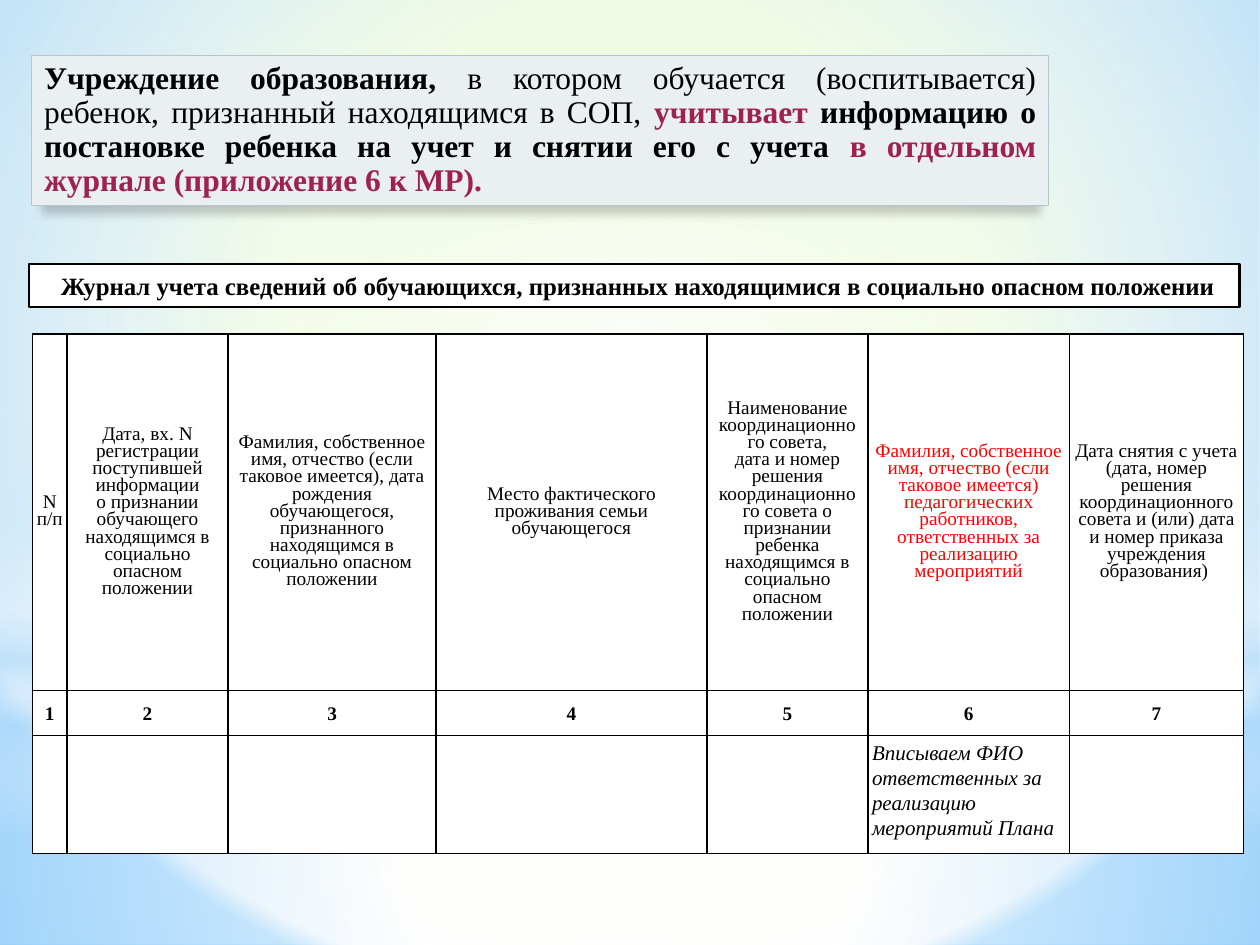
"""Build a slide presenting the register of pupils in a socially dangerous position."""
from dataclasses import dataclass
from typing import Optional

import lxml.etree
import pptx
import pptx.dml.color
import pptx.enum.shapes
import pptx.enum.text
import pptx.oxml
import pptx.oxml.ns
import pptx.util

Cm = pptx.util.Cm
Pt = pptx.util.Pt
qn = pptx.oxml.ns.qn
Align = pptx.enum.text.PP_ALIGN
Anchor = pptx.enum.text.MSO_ANCHOR
Preset = pptx.enum.shapes.MSO_SHAPE
DRAWING = 'xmlns:a="http://schemas.openxmlformats.org/drawingml/2006/main"'
FONT = "Times New Roman"
BLACK, WHITE, RED, CRIMSON = "000000", "FFFFFF", "FF0000", "9E224E"


@dataclass
class Words:
    text: str
    size: float = 11
    color: str = BLACK
    bold: bool = False
    italic: bool = False


@dataclass
class Gradient:
    stops: list[tuple[int, str, int]]
    center: Optional[tuple[int, int, int, int]] = (50, 50, 50, 50)


@dataclass
class Layer:
    preset: int
    top: float
    height: float
    gradient: Gradient


@dataclass
class Panel:
    box: tuple[float, float, float, float]
    fill: str
    line: str
    line_width: float
    align: int
    spacing: float
    words: list[Words]


BACKDROP = Gradient([(0, "CAF297", 100), (97, WHITE, 100), (100, "5BB9FF", 100)], (20, 10, 20, 60))
SKY = "B4DCFA"
LAYERS = [
    Layer(Preset.RECTANGLE, 14.17, 4.88, Gradient([(0, WHITE, 91), (37, WHITE, 76), (100, SKY, 79)])),
    Layer(Preset.RECTANGLE, 0, 14.17, Gradient([(0, WHITE, 89), (48, WHITE, 62), (100, SKY, 79)])),
    Layer(Preset.RECTANGLE, 10.46, 6.35, Gradient(
        [(0, WHITE, 0), (29, WHITE, 30), (45, SKY, 40), (55, WHITE, 26), (65, SKY, 60), (100, WHITE, 0)], None)),
    Layer(Preset.OVAL, 4.45, 14.17, Gradient([(0, WHITE, 100), (56, WHITE, 0)])),
]
JOURNAL_TITLE = Panel((0.58, 5.33, 24.41, 0.86), WHITE, BLACK, 1.25, Align.CENTER, 1, [
    Words(" Журнал учета сведений об обучающихся, признанных находящимися в социально опасном положении",
          14.2, bold=True)])
REQUIREMENT = Panel((0.64, 1.12, 20.5, 3.02), "EAEFF2", "B7C5D1", 0.75, Align.JUSTIFY, 0.9, [
    Words("Учреждение образования, ", 18, bold=True),
    Words("в котором обучается (воспитывается) ребенок, признанный находящимся в СОП, ", 18),
    Words("учитывает ", 18, CRIMSON, True),
    Words("информацию о постановке ребенка на учет и снятии его с учета ", 18, bold=True),
    Words("в отдельном журнале (приложение 6 к МР).", 18, CRIMSON, True)])
COLUMN_WIDTHS = [0.69, 3.25, 4.19, 5.46, 3.25, 4.06, 3.51]
ROW_HEIGHTS = [7.19, 0.91, 2.36]
HEADINGS = [
    ["N\nп/п"],
    ["Дата, вх. N регистрации поступившей информации",
     "о признании обучающего находящимся в социально опасном положении"],
    ["Фамилия, собственное имя, отчество (если таковое имеется), дата рождения обучающегося, "
     "признанного находящимся в социально опасном положении"],
    ["Место фактического проживания семьи обучающегося"],
    ["Наименование координационно", "го совета,", "дата и номер решения координационно",
     "го совета о признании ребенка находящимся в социально опасном положении"],
    ["Фамилия, собственное имя, отчество (если таковое имеется) педагогических работников, "
     "ответственных за реализацию мероприятий"],
    ["Дата снятия с учета",
     "(дата, номер решения координационного совета и (или) дата и номер приказа учреждения образования) "],
]
RESPONSIBLE = 5
SAMPLE = Words("Вписываем ФИО ответственных за реализацию мероприятий Плана", 12, italic=True)


def rgb(color: str) -> pptx.dml.color.RGBColor:
    return pptx.dml.color.RGBColor.from_string(color)


def apply_gradient(fill, owner, gradient: Gradient) -> None:
    fill.gradient()
    stops = "".join(
        f'<a:gs pos="{position * 1000}"><a:srgbClr val="{color}"><a:alpha val="{alpha * 1000}"/></a:srgbClr></a:gs>'
        for position, color, alpha in gradient.stops)
    if gradient.center is None:
        direction = '<a:lin ang="5400000" scaled="0"/>'
    else:
        left, top, right, bottom = (side * 1000 for side in gradient.center)
        direction = (f'<a:path path="circle"><a:fillToRect l="{left}" t="{top}" '
                     f'r="{right}" b="{bottom}"/></a:path>')
    plain = owner.find(".//" + qn("a:gradFill"))
    plain.getparent().replace(plain, pptx.oxml.parse_xml(
        f'<a:gradFill {DRAWING} rotWithShape="1"><a:gsLst>{stops}</a:gsLst>{direction}</a:gradFill>'))


def write_paragraph(paragraph, words: list[Words], align: int, spacing: float) -> None:
    paragraph.alignment = align
    paragraph.line_spacing = spacing
    for part in words:
        for index, line in enumerate(part.text.split("\n")):
            if index:
                paragraph.add_line_break()
            run = paragraph.add_run()
            run.text = line
            run.font.name = FONT
            run.font.size = Pt(part.size)
            run.font.bold = part.bold
            run.font.italic = part.italic
            run.font.color.rgb = rgb(part.color)


def draw_layer(slide, layer: Layer) -> None:
    shape = slide.shapes.add_shape(layer.preset, 0, Cm(layer.top), Cm(25.4), Cm(layer.height))
    shape.shadow.inherit = False
    shape.line.fill.background()
    apply_gradient(shape.fill, shape.element, layer.gradient)


def draw_panel(slide, panel: Panel):
    shape = slide.shapes.add_shape(Preset.RECTANGLE, *map(Cm, panel.box))
    shape.shadow.inherit = False
    shape.fill.solid()
    shape.fill.fore_color.rgb = rgb(panel.fill)
    shape.line.color.rgb = rgb(panel.line)
    shape.line.width = Pt(panel.line_width)
    frame = shape.text_frame
    frame.word_wrap = True
    frame.auto_size = pptx.enum.text.MSO_AUTO_SIZE.SHAPE_TO_FIT_TEXT
    write_paragraph(frame.paragraphs[0], panel.words, panel.align, panel.spacing)
    return shape


def cast_shadow(shape) -> None:
    effects = shape.element.spPr.find(qn("a:effectLst"))
    effects.append(pptx.oxml.parse_xml(
        f'<a:outerShdw {DRAWING} blurRad="{Pt(5)}" dist="{Pt(4)}" dir="5400000" sx="98000" algn="b" '
        f'rotWithShape="0"><a:srgbClr val="{BLACK}"><a:alpha val="20000"/></a:srgbClr></a:outerShdw>'))


def style_cell(cell) -> None:
    cell.margin_left = cell.margin_right = Cm(0.08)
    cell.margin_top = cell.margin_bottom = Cm(0.1)
    cell.fill.solid()
    cell.fill.fore_color.rgb = rgb(WHITE)
    properties = cell._tc.get_or_add_tcPr()
    for index, side in enumerate(("lnL", "lnR", "lnT", "lnB")):
        properties.insert(index, pptx.oxml.parse_xml(
            f'<a:{side} {DRAWING} w="{Pt(1)}"><a:solidFill><a:srgbClr val="{BLACK}"/></a:solidFill></a:{side}>'))


def fill_cell(cell, paragraphs: list[Words], align: int, spacing: float, anchor: int) -> None:
    cell.vertical_anchor = anchor
    frame = cell.text_frame
    for index, words in enumerate(paragraphs):
        paragraph = frame.add_paragraph() if index else frame.paragraphs[0]
        write_paragraph(paragraph, [words], align, spacing)


def draw_journal(slide) -> None:
    journal = slide.shapes.add_table(len(ROW_HEIGHTS), len(COLUMN_WIDTHS), Cm(0.66), Cm(6.73),
                                     Cm(sum(COLUMN_WIDTHS)), Cm(sum(ROW_HEIGHTS))).table
    journal.first_row = journal.horz_banding = False
    for column, width in zip(journal.columns, COLUMN_WIDTHS):
        column.width = Cm(width)
    for row, height in zip(journal.rows, ROW_HEIGHTS):
        row.height = Cm(height)
    for cell in journal.iter_cells():
        style_cell(cell)
    for index, heading in enumerate(HEADINGS):
        color = RED if index == RESPONSIBLE else BLACK
        fill_cell(journal.cell(0, index), [Words(text, color=color) for text in heading],
                  Align.CENTER, 0.8, Anchor.MIDDLE)
        fill_cell(journal.cell(1, index), [Words(str(index + 1), bold=True)], Align.CENTER, 1.07, Anchor.MIDDLE)
    fill_cell(journal.cell(2, RESPONSIBLE), [SAMPLE], Align.LEFT, 1.07, Anchor.TOP)


def main() -> None:
    deck = pptx.Presentation()
    deck.slide_width, deck.slide_height = Cm(25.4), Cm(19.05)
    slide = deck.slides.add_slide(deck.slide_layouts[6])
    apply_gradient(slide.background.fill, slide.element, BACKDROP)
    for layer in LAYERS:
        draw_layer(slide, layer)
    draw_panel(slide, JOURNAL_TITLE)
    cast_shadow(draw_panel(slide, REQUIREMENT))
    draw_journal(slide)
    deck.save("out.pptx")


if __name__ == "__main__":
    main()
